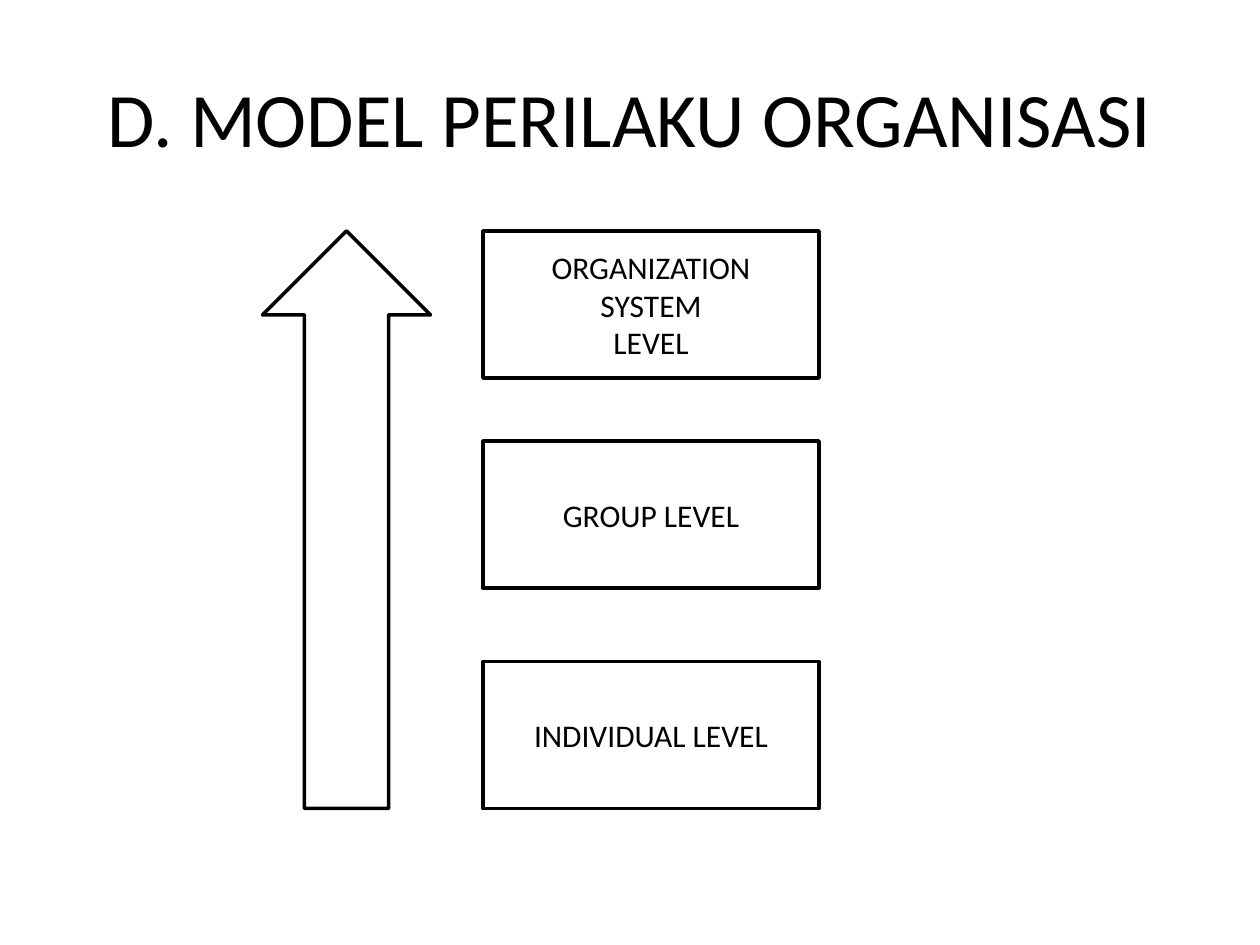
from pptx import Presentation
from pptx.dml.color import RGBColor
from pptx.enum.shapes import MSO_SHAPE
from pptx.enum.text import MSO_ANCHOR, PP_ALIGN
from pptx.util import Pt

RECTANGLE = MSO_SHAPE.RECTANGLE
UP_ARROW = MSO_SHAPE.UP_ARROW
MIDDLE = MSO_ANCHOR.MIDDLE
CENTER = PP_ALIGN.CENTER

COLORS = {"paper": "FFFFFF", "ink": "000000"}
FONT = "Calibri"
LEVEL_HEIGHT = 84
LEVELS = [
    (0, "ORGANIZATION\nSYSTEM\nLEVEL"),
    (120, "GROUP LEVEL"),
    (246, "INDIVIDUAL LEVEL"),
]


def color(name):
    return RGBColor.from_string(COLORS[name])


def write_text(shape, text, size):
    frame = shape.text_frame
    frame.word_wrap = True
    frame.vertical_anchor = MIDDLE
    frame.text = text
    for para in frame.paragraphs:
        para.alignment = CENTER
        para.font.name = FONT
        para.font.size = Pt(size)
        para.font.color.rgb = color("ink")


def add_outlined(page, kind, left, top, width, height):
    shape = page.shapes.add_shape(kind, Pt(left), Pt(top), Pt(width), Pt(height))
    shape.shadow.inherit = False
    shape.fill.solid()
    shape.fill.fore_color.rgb = color("paper")
    shape.line.color.rgb = color("ink")
    shape.line.width = Pt(2)
    return shape


def place_title(page, left, top, width, height):
    title = page.shapes.title
    title.left, title.top = Pt(left), Pt(top)
    title.width, title.height = Pt(width), Pt(height)
    write_text(title, "D. MODEL PERILAKU ORGANISASI", 44)


def place_levels(page, left, top, width):
    for offset, label in LEVELS:
        level = add_outlined(page, RECTANGLE, left, top + offset, width, LEVEL_HEIGHT)
        write_text(level, label, 18)


def place_arrow(page, left, top, width, height):
    add_outlined(page, UP_ARROW, left, top, width, height)


def main():
    deck = Presentation()
    deck.slide_width, deck.slide_height = Pt(720), Pt(540)
    page = deck.slides.add_slide(deck.slide_layouts[5])
    page.background.fill.solid()
    page.background.fill.fore_color.rgb = color("paper")
    place_title(page, 36, 21.6, 648, 90)
    place_levels(page, 276, 132, 192)
    place_arrow(page, 150, 132, 96, 330)
    deck.save("out.pptx")


if __name__ == "__main__":
    main()
